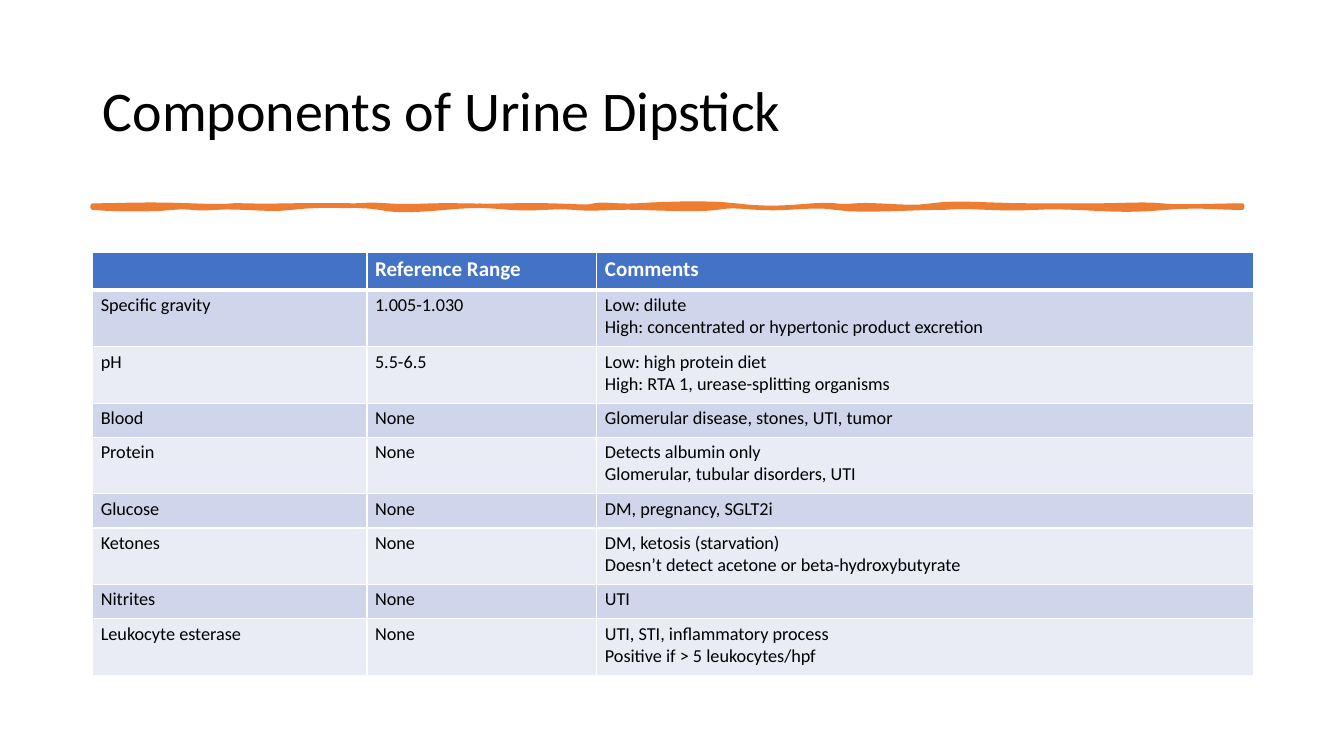
"""Build the slide on the components of a urine dipstick."""
import pptx
import pptx.dml.color
import pptx.enum.text
import pptx.oxml
import pptx.oxml.ns
import pptx.util
from lxml import etree

Inches, Pt = pptx.util.Inches, pptx.util.Pt
qn = pptx.oxml.ns.qn


def color(code):
    return pptx.dml.color.RGBColor.from_string(code)


def write(frame, text, size=13, bold=False, code="000000", space=None):
    for i, line in enumerate(text.split("\n")):
        para = frame.paragraphs[0] if i == 0 else frame.add_paragraph()
        para.alignment = pptx.enum.text.PP_ALIGN.LEFT
        para.line_spacing = space
        run = para.add_run()
        run.text = line
        run.font.name = "Calibri"
        run.font.size = Pt(size)
        run.font.bold = bold
        run.font.color.rgb = color(code)


deck = pptx.Presentation()
deck.slide_width, deck.slide_height = Inches(13.33), Inches(7.5)
slide = deck.slides.add_slide(deck.slide_layouts[5])

title = slide.shapes.title
title.left, title.top = Inches(0.92), Inches(0.4)
title.width, title.height = Inches(11.5), Inches(1.45)
title.text_frame.word_wrap = True
title.text_frame.vertical_anchor = pptx.enum.text.MSO_ANCHOR.MIDDLE
write(title.text_frame, "Components of Urine Dipstick", size=40, space=0.9)

upper = [
    (1.19, 2.04, 1.44, 2.02, 1.9), (2.37, 2.06, 2.2, 2.03, 2.44),
    (2.67, 2.05, 3.03, 2.03, 3.31), (3.6, 2.05, 3.59, 2.02, 3.84),
    (4.1, 2.06, 4.23, 2.03, 4.6), (4.98, 2.05, 5.14, 2.03, 5.48),
    (5.81, 2.05, 5.81, 2.06, 5.89), (5.98, 2.02, 6.15, 2.05, 6.31),
    (6.47, 2.03, 7.01, 2, 7.3), (7.59, 2.08, 7.81, 2.06, 8.06),
    (8.31, 2.02, 8.27, 2.06, 8.48), (8.68, 2.02, 9.01, 2.08, 9.24),
    (9.47, 2, 9.82, 2.04, 10.23), (10.63, 2.04, 10.63, 2.04, 10.87),
    (11.12, 2.04, 11.36, 2.02, 11.52), (11.68, 2.06, 12.03, 2.04, 12.32),
]
lower = [
    (12.32, 2.05, 12.32, 2.05, 12.32), (12.05, 2.06, 11.89, 2.03, 11.56),
    (11.22, 2.09, 11.1, 2.08, 10.68), (10.27, 2.04, 10.23, 2.08, 9.81),
    (9.39, 2.04, 9.52, 2.06, 9.28), (9.04, 2.06, 8.51, 2.1, 8.29),
    (8.06, 2.02, 7.82, 2.08, 7.53), (7.24, 2.04, 7.25, 2.04, 7.11),
    (6.98, 2.08, 6.61, 2.07, 6.35), (6.09, 2.05, 5.9, 2.08, 5.7),
    (5.51, 2.04, 5.28, 2.08, 5.06), (4.83, 2.04, 4.73, 2.03, 4.41),
    (4.09, 2.09, 3.9, 2.09, 3.77), (3.63, 2.03, 3.1, 2.03, 2.89),
    (2.68, 2.09, 2.35, 2.04, 2.13), (1.92, 2.08, 1.89, 2.04, 1.71),
    (1.54, 2.08, 1.14, 2.08, 0.92),
]
steps = 6
last = (0.92, 2.04)
points = []
for curves, level in ((upper, 2.04), (lower, 2.06)):
    for ax, ay, bx, by, x in curves:
        knots = (last, (ax, ay), (bx, by), (x, level))
        for n in range(1, steps + 1):
            t = n / steps
            parts = ((1 - t) ** 3, 3 * t * (1 - t) ** 2, 3 * t * t * (1 - t), t ** 3)
            points.append(tuple(
                Inches(sum(w * knot[axis] for w, knot in zip(parts, knots)))
                for axis in (0, 1)))
        last = knots[3]
build = slide.shapes.build_freeform(Inches(0.92), Inches(2.04))
build.add_line_segments(points, close=True)
stroke = build.convert_to_shape()
stroke.shadow.inherit = False
stroke.fill.solid()
stroke.fill.fore_color.rgb = color("ED7D31")
stroke.line.color.rgb = color("ED7D31")
stroke.line.width = Pt(3.25)
line = stroke.element.spPr.find(qn("a:ln"))
line.set("cap", "rnd")
etree.SubElement(line, qn("a:round"))

rows = [
    ("", "Reference Range", "Comments"),
    ("Specific gravity", "1.005-1.030",
     "Low: dilute\nHigh: concentrated or hypertonic product excretion"),
    ("pH", "5.5-6.5",
     "Low: high protein diet\nHigh: RTA 1, urease-splitting organisms"),
    ("Blood", "None", "Glomerular disease, stones, UTI, tumor"),
    ("Protein", "None",
     "Detects albumin only\nGlomerular, tubular disorders, UTI"),
    ("Glucose", "None", "DM, pregnancy, SGLT2i"),
    ("Ketones", "None",
     "DM, ketosis (starvation)\nDoesn’t detect acetone or beta-hydroxybutyrate"),
    ("Nitrites", "None", "UTI"),
    ("Leukocyte esterase", "None",
     "UTI, STI, inflammatory process\nPositive if > 5 leukocytes/hpf"),
]
table = slide.shapes.add_table(
    len(rows), 3, Inches(0.92), Inches(2.5), Inches(11.5), Inches(4.19)).table
for column, width in zip(table.columns, (2.72, 2.28, 6.51)):
    column.width = Inches(width)

for r, row in enumerate(rows):
    head = r == 0
    height = 0.38 if head else 0.56 if "\n" in row[2] else 0.34
    table.rows[r].height = Inches(height)
    for c, text in enumerate(row):
        cell = table.cell(r, c)
        cell.margin_left = cell.margin_right = Inches(0.08)
        cell.margin_top = cell.margin_bottom = Inches(0.04)
        cell.fill.solid()
        cell.fill.fore_color.rgb = color(
            "4472C4" if head else "CFD5EA" if r % 2 else "E9EBF5")
        if head:
            write(cell.text_frame, text, size=15, bold=True, code="FFFFFF")
        else:
            write(cell.text_frame, text)
        props = cell._tc.get_or_add_tcPr()
        for i, side in enumerate("LRTB"):
            thick = (r, side) in ((0, "B"), (1, "T"))
            edge = etree.Element(qn("a:ln" + side), w=str(Pt(3 if thick else 1)))
            paint = etree.SubElement(edge, qn("a:solidFill"))
            etree.SubElement(paint, qn("a:srgbClr"), val="FFFFFF")
            props.insert(i, edge)

deck.save("out.pptx")
